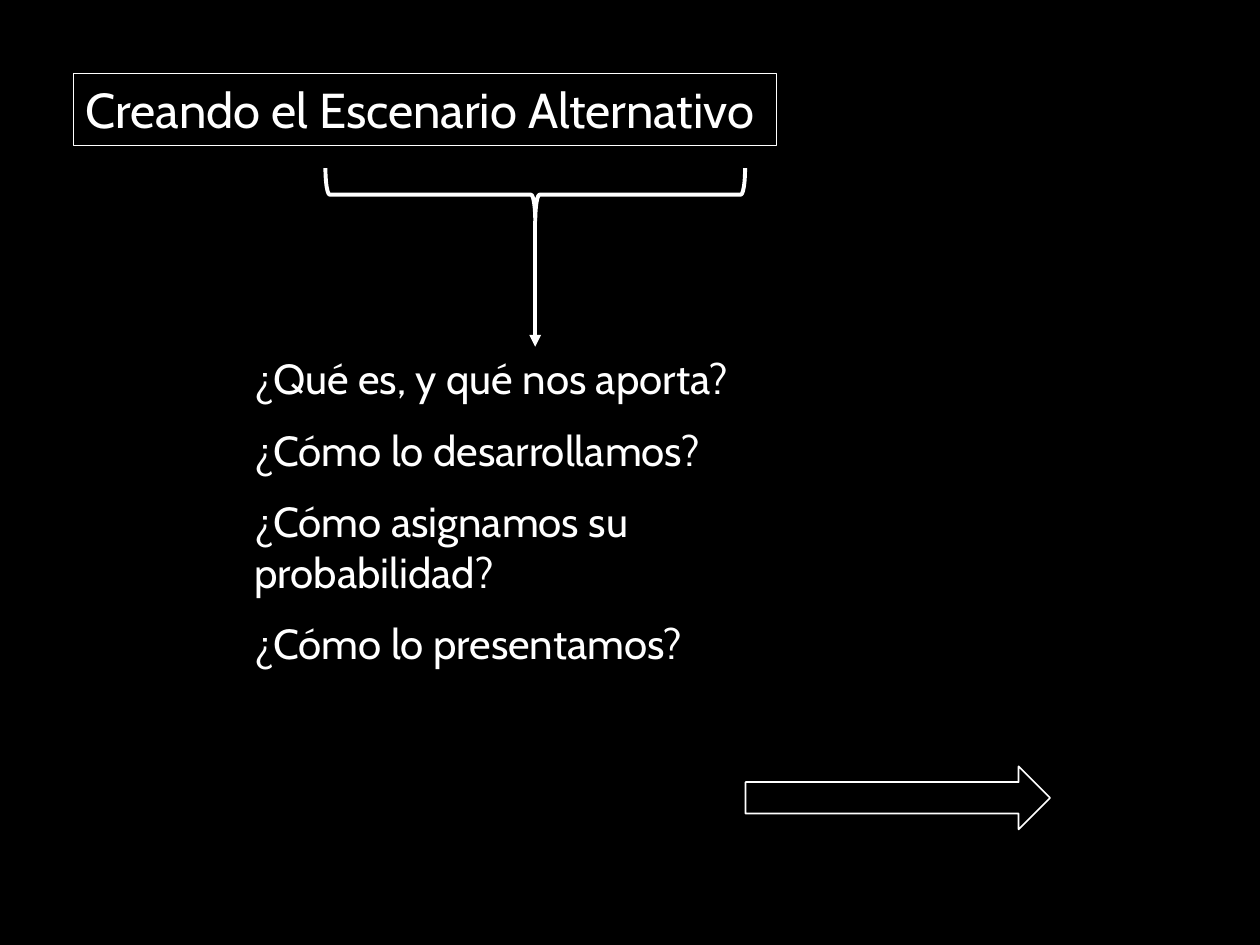
from lxml import etree
from pptx import Presentation
from pptx.dml.color import RGBColor
from pptx.enum.shapes import MSO_CONNECTOR, MSO_SHAPE
from pptx.enum.text import MSO_ANCHOR, MSO_AUTO_SIZE, PP_ALIGN
from pptx.oxml.ns import qn
from pptx.util import Cm, Pt

BLACK = RGBColor(0, 0, 0)
WHITE = RGBColor(255, 255, 255)
RECT, ARROW, BRACE = MSO_SHAPE.RECTANGLE, MSO_SHAPE.RIGHT_ARROW, MSO_SHAPE.RIGHT_BRACE
STRAIGHT = MSO_CONNECTOR.STRAIGHT
LEFT, TOP = PP_ALIGN.LEFT, MSO_ANCHOR.TOP
GROW = MSO_AUTO_SIZE.SHAPE_TO_FIT_TEXT

TITLE = "Creando el Escenario Alternativo"
ASKS = [
    "¿Qué es, y qué nos aporta?",
    "¿Cómo lo desarrollamos?",
    "¿Cómo asignamos su probabilidad?",
    "¿Cómo lo presentamos?",
]


def apply(item, form):
    for name, value in form.items():
        setattr(item, name, value)


def outline(shapes, kind, box, width):
    """Add an unfilled shape with a white line."""
    shape = shapes.add_shape(kind, *map(Cm, box))
    shape.shadow.inherit = False
    shape.fill.background()
    shape.line.color.rgb = WHITE
    shape.line.width = Pt(width)
    return shape


def write(frame, lines, size, after=0):
    apply(frame, {"word_wrap": True, "auto_size": GROW, "vertical_anchor": TOP})
    for i, line in enumerate(lines):
        para = frame.paragraphs[0] if i == 0 else frame.add_paragraph()
        apply(para, {"text": line, "alignment": LEFT, "space_after": Pt(after)})
        apply(para.font, {"name": "Cabin", "size": Pt(size)})
        para.font.color.rgb = WHITE


def add_title(shapes, box):
    write(outline(shapes, RECT, box, 0.75).text_frame, [TITLE], 28)


def add_asks(shapes, box):
    write(shapes.add_textbox(*map(Cm, box)).text_frame, ASKS, 24, 12)


def add_link(shapes, box):
    """Place a downward brace at the top of the box and an arrow below it."""
    x, y, width, height = box
    depth = 1.07
    mid = x + width / 2
    group = shapes.add_group_shape().shapes

    # Brace, turned a quarter about its centre
    turned = (mid - depth / 2, y + depth / 2 - width / 2, depth, width)
    brace = outline(group, BRACE, turned, 2.25)
    brace.rotation = 90
    brace.adjustments[0] = 0.08
    brace.adjustments[1] = 0.5

    # Arrow from the brace tip to the questions
    line = group.add_connector(STRAIGHT, Cm(mid), Cm(y + depth), Cm(mid), Cm(y + height))
    line.line.color.rgb = WHITE
    line.line.width = Pt(2.25)
    etree.SubElement(line.line._get_or_add_ln(), qn("a:tailEnd"), type="triangle")
    etree.SubElement(line._element.spPr, qn("a:effectLst"))


def main():
    deck = Presentation()
    apply(deck, {"slide_width": Cm(25.4), "slide_height": Cm(19.05)})
    slide = deck.slides.add_slide(deck.slide_layouts[6])
    slide.background.fill.solid()
    slide.background.fill.fore_color.rgb = BLACK
    shapes = slide.shapes

    add_asks(shapes, (4.88, 6.99, 12.75, 5.64))
    outline(shapes, ARROW, (15.03, 15.45, 6.14, 1.27), 1)  # onward arrow
    add_title(shapes, (1.48, 1.48, 14.17, 1.45))
    add_link(shapes, (6.56, 3.39, 8.46, 3.6))
    deck.save("out.pptx")


if __name__ == "__main__":
    main()
